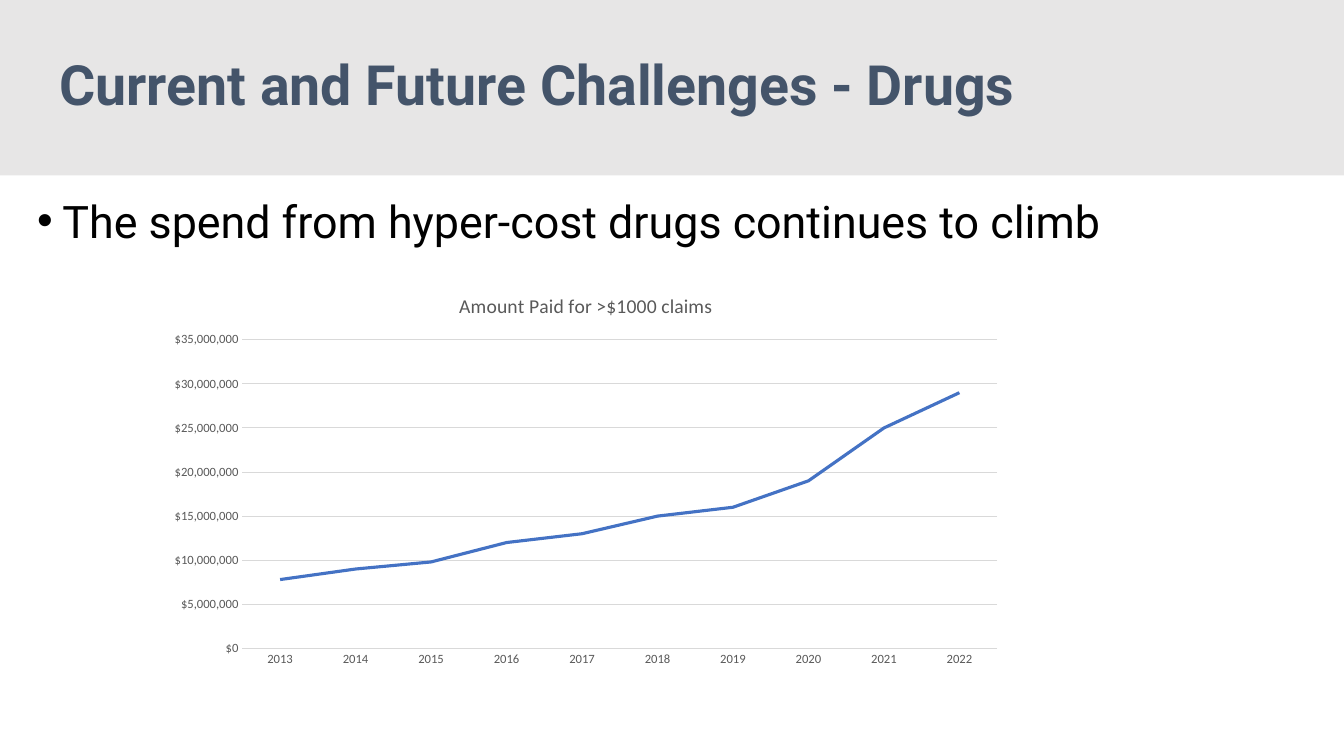
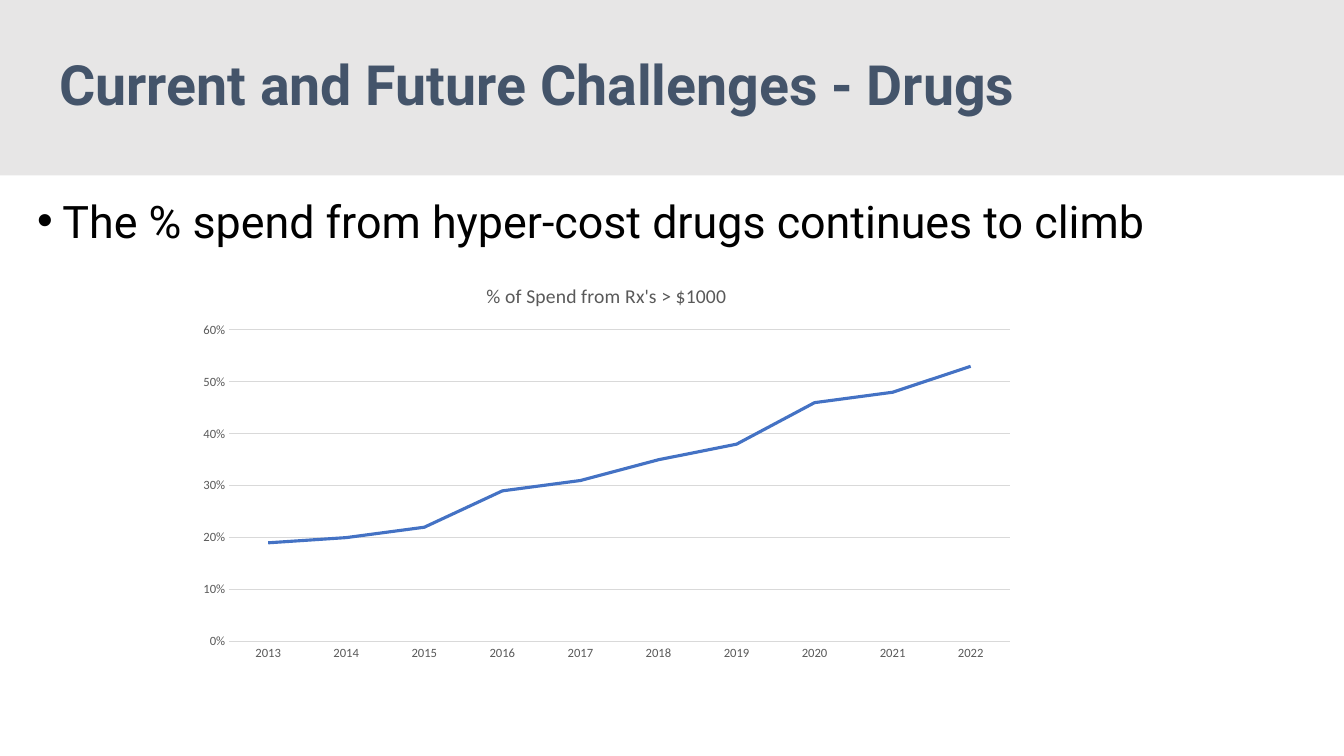
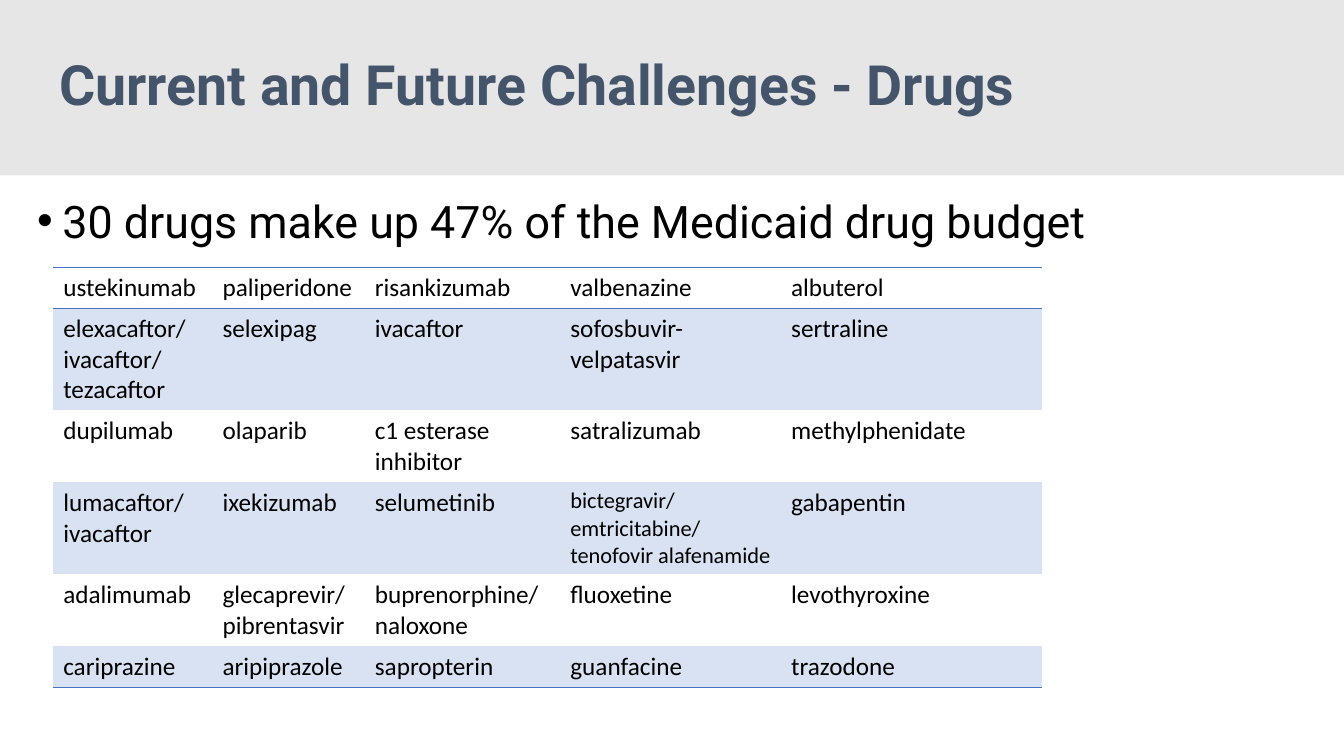
import pptx
import pptx.chart.data
import pptx.dml.color
import pptx.enum.chart
import pptx.enum.shapes
import pptx.enum.text
import pptx.oxml
import pptx.util
from lxml import etree

Pt = pptx.util.Pt
RGB = pptx.dml.color.RGBColor.from_string
A = "http://schemas.openxmlformats.org/drawingml/2006/main"
NO_TABLE_STYLE = "{2D5ABB26-0587-4C30-8999-92F81FD0307C}"
C = {"band": "E7E6E6", "title": "44546A", "text": "000000", "blue": "4472C4",
     "stripe": "D9E2F3", "label": "595959", "grid": "D9D9D9"}

prs = pptx.Presentation()
prs.slide_width = pptx.util.Inches(13.33)
prs.slide_height = pptx.util.Inches(7.5)


def area(x, y, w, h):
    """Turn percentages of the slide's width and height into lengths."""
    sw, sh = prs.slide_width / 100, prs.slide_height / 100
    return [pptx.util.Emu(round(v)) for v in (x * sw, y * sh, w * sw, h * sh)]


def style(font, name, size, color, bold=False):
    font.name, font.size, font.bold = name, Pt(size), bold
    font.color.rgb = RGB(color)


years = [str(y) for y in range(2013, 2023)]
pages = [
    {"bullet": "The spend from hyper-cost drugs continues to climb",
     "title": "Amount Paid for >$1000 claims",
     "at": (11.72, 36.4, 63.75, 52.9), "format": '"$"#,##0', "max": 35000000, "step": 5000000,
     "values": [7800000, 9000000, 9800000, 12000000, 13000000,
                15000000, 16000000, 19000000, 25000000, 29000000]},
    {"bullet": "The % spend from hyper-cost drugs continues to climb",
     "title": "% of Spend from Rx's > $1000",
     "at": (13.88, 35.07, 62.5, 53.33), "format": "0%", "max": 0.6, "step": 0.1,
     "values": [0.19, 0.2, 0.22, 0.29, 0.31, 0.35, 0.38, 0.46, 0.48, 0.53]},
    {"bullet": "30 drugs make up 47% of the Medicaid drug budget"},
]

for page in pages:
    s = prs.slides.add_slide(prs.slide_layouts[6])

    # Title band
    sp = s.shapes.add_shape(pptx.enum.shapes.MSO_SHAPE.RECTANGLE, *area(0, 0, 100, 23.2))
    sp.shadow.inherit = False
    sp.fill.solid()
    sp.fill.fore_color.rgb = RGB(C["band"])
    sp.line.fill.background()

    tf = s.shapes.add_textbox(*area(3.68, 7.6, 92.63, 8)).text_frame
    tf.word_wrap = True
    tf.vertical_anchor = pptx.enum.text.MSO_ANCHOR.MIDDLE
    p = tf.paragraphs[0]
    p.text = "Current and Future Challenges - Drugs"
    p.line_spacing = 0.9
    style(p.runs[0].font, "Roboto", 39.6, C["title"], True)

    # Bullet line
    tf = s.shapes.add_textbox(*area(2.03, 24.93, 96.53, 61.2)).text_frame
    tf.word_wrap = True
    p = tf.paragraphs[0]
    p.text = page["bullet"]
    pPr = p._p.get_or_add_pPr()
    indent = pptx.util.Inches(0.25)
    pPr.set("marL", str(indent))
    pPr.set("indent", str(-indent))
    etree.SubElement(pPr, f"{{{A}}}buFont", typeface="Arial")
    etree.SubElement(pPr, f"{{{A}}}buChar", char="•")
    style(p.runs[0].font, "Roboto", 32, C["text"])

    # Line chart
    if "values" in page:
        data = pptx.chart.data.CategoryChartData()
        data.categories = years
        data.add_series("Series 1", page["values"])
        chart = s.shapes.add_chart(pptx.enum.chart.XL_CHART_TYPE.LINE,
                                   *area(*page["at"]), data).chart
        style(chart.font, "Calibri", 10, C["text"])
        chart.has_legend = False
        chart.has_title = True
        tf = chart.chart_title.text_frame
        tf.text = page["title"]
        style(tf.paragraphs[0].runs[0].font, "Calibri", 14, C["label"])

        for axis in (chart.category_axis, chart.value_axis):
            axis.major_tick_mark = pptx.enum.chart.XL_TICK_MARK.NONE
            axis.minor_tick_mark = pptx.enum.chart.XL_TICK_MARK.NONE
            style(axis.tick_labels.font, "Calibri", 9, C["label"])
        values = chart.value_axis
        values.minimum_scale, values.maximum_scale = 0, page["max"]
        values.major_unit = page["step"]
        values.tick_labels.number_format = page["format"]
        values.tick_labels.number_format_is_linked = False
        values.format.line.fill.background()
        for line in (chart.category_axis.format.line, values.major_gridlines.format.line):
            line.color.rgb = RGB(C["grid"])
            line.width = Pt(0.75)

        chart.plots[0].vary_by_categories = False
        series = chart.plots[0].series[0]
        series.smooth = False
        series.marker.style = pptx.enum.chart.XL_MARKER_STYLE.NONE
        series.format.line.color.rgb = RGB(C["blue"])
        series.format.line.width = Pt(2.25)

# Drug table on the last slide
drugs = [
    ["ustekinumab", "paliperidone", "risankizumab", "valbenazine", "albuterol"],
    ["elexacaftor/ ivacaftor/ tezacaftor", "selexipag", "ivacaftor",
     "sofosbuvir-velpatasvir", "sertraline"],
    ["dupilumab", "olaparib", "c1 esterase inhibitor", "satralizumab", "methylphenidate"],
    ["lumacaftor/ ivacaftor", "ixekizumab", "selumetinib",
     "bictegravir/emtricitabine/tenofovir alafenamide", "gabapentin"],
    ["adalimumab", "glecaprevir/ pibrentasvir", "buprenorphine/ naloxone",
     "fluoxetine", "levothyroxine"],
    ["cariprazine", "aripiprazole", "sapropterin", "guanfacine", "trazodone"],
]
col_shares = [11.85, 11.33, 14.55, 16.43, 19.43]
row_shares = [5.42, 13.49, 9.52, 12.17, 9.52, 5.42]
borders = {0: ("lnT", "lnB"), len(drugs) - 1: ("lnB",)}

table = s.shapes.add_table(len(drugs), len(col_shares), *area(
    3.96, 35.38, sum(col_shares), sum(row_shares))).table
table.first_row = table.horz_banding = False
table._tbl.tblPr.find(f"{{{A}}}tableStyleId").text = NO_TABLE_STYLE
for col, share in zip(table.columns, col_shares):
    col.width = area(0, 0, share, 0)[2]
for i, (names, share) in enumerate(zip(drugs, row_shares)):
    table.rows[i].height = area(0, 0, 0, share)[3]
    for j, name in enumerate(names):
        cell = table.cell(i, j)
        cell.text = name
        size = 16 if name.startswith("bictegravir") else 18
        style(cell.text_frame.paragraphs[0].runs[0].font, "Calibri", size, C["text"])
        for side in borders.get(i, ()):
            cell._tc.get_or_add_tcPr().append(pptx.oxml.parse_xml(
                f'<a:{side} xmlns:a="{A}" w="{Pt(1)}"><a:solidFill>'
                f'<a:srgbClr val="{C["blue"]}"/></a:solidFill></a:{side}>'))
        if i % 2:
            cell.fill.solid()
            cell.fill.fore_color.rgb = RGB(C["stripe"])
        else:
            cell.fill.background()

prs.save("out.pptx")
